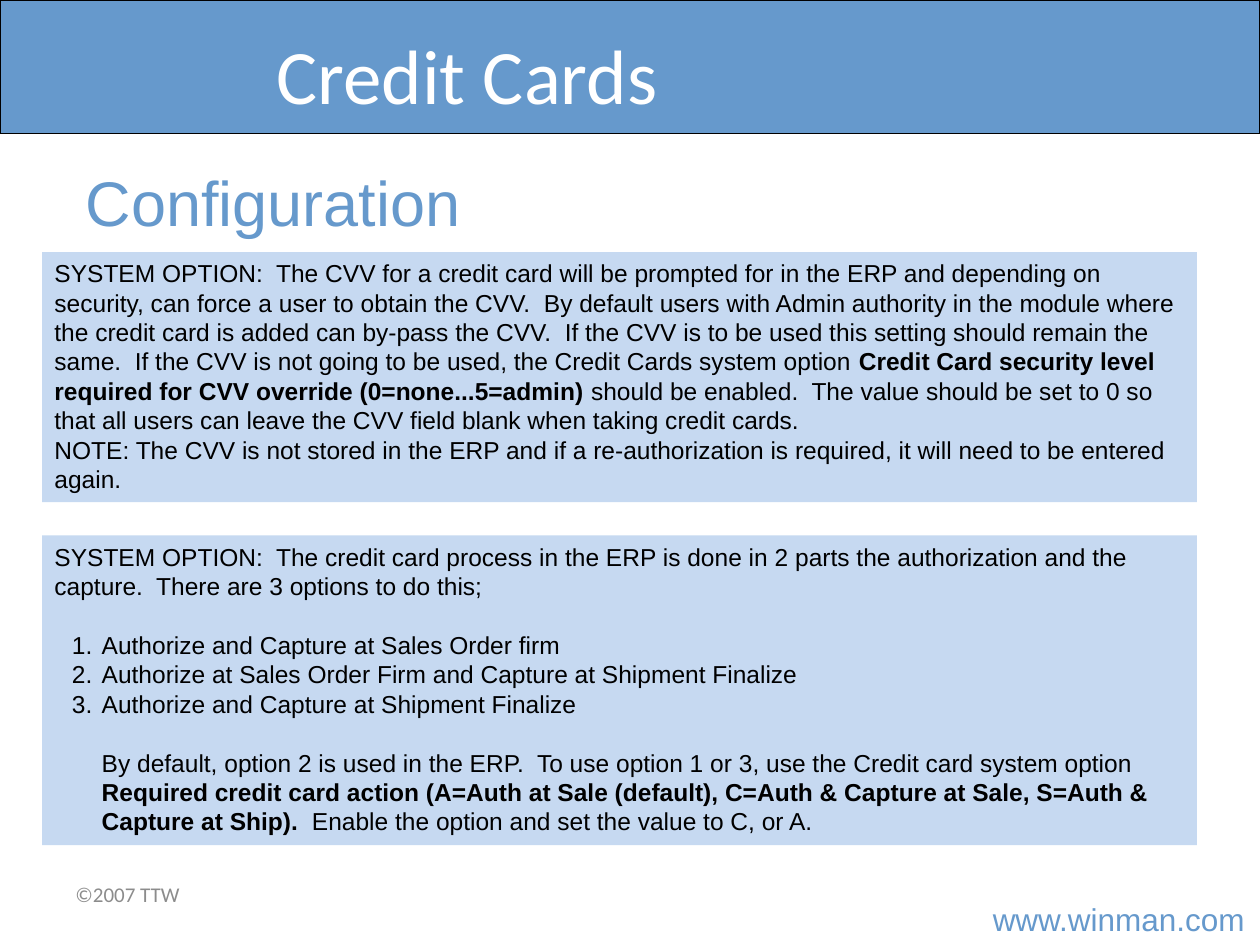
from pptx import Presentation
from pptx.dml.color import RGBColor
from pptx.enum.shapes import MSO_SHAPE
from pptx.enum.text import MSO_ANCHOR, PP_ALIGN
from pptx.util import Pt
from lxml.etree import SubElement
from pptx.oxml.ns import qn

BLUE = RGBColor(0x66, 0x99, 0xCC)
PALE = RGBColor(0xC6, 0xD9, 0xF1)
GREY = RGBColor(0x8C, 0x8C, 0x8C)
BLACK = RGBColor(0, 0, 0)
WHITE = RGBColor(255, 255, 255)
LINE = 16.8  # height of one line of body text

prs = Presentation()
prs.slide_width, prs.slide_height = Pt(720), Pt(540)
s = prs.slides.add_slide(prs.slide_layouts[5])


def write(tf, text, size=14, font="Arial", color=BLACK, align=PP_ALIGN.LEFT,
          before=0, indent=0, numbered=False, first=True):
    """Add a paragraph; every second part between ** marks is bold."""
    p = tf.paragraphs[0] if first else tf.add_paragraph()
    pPr = p._p.get_or_add_pPr()
    if indent:
        pPr.set("marL", str(Pt(indent)))
        pPr.set("indent", str(Pt(-17 if numbered else 0)))
    p.alignment = align
    p.space_before = Pt(before)
    if numbered:
        SubElement(pPr, qn("a:buFont"), typeface="+mj-lt")
        SubElement(pPr, qn("a:buAutoNum"), type="arabicPeriod")
    for i, part in enumerate(text.split("**")):
        if part:
            r = p.add_run()
            r.text = part
            r.font.size, r.font.name = Pt(size), font
            r.font.bold = i % 2 == 1
            r.font.color.rgb = color


def add_rect(left, top, width, height, fill):
    sp = s.shapes.add_shape(MSO_SHAPE.RECTANGLE, Pt(left), Pt(top), Pt(width), Pt(height))
    sp.shadow.inherit = False
    sp.fill.solid()
    sp.fill.fore_color.rgb = fill
    sp.line.fill.background()
    sp.text_frame.word_wrap = True
    sp.text_frame.vertical_anchor = MSO_ANCHOR.TOP
    return sp


# Header band, placed behind the title
band = add_rect(0, 0, 720, 76.3, BLUE)
band.line.color.rgb = BLACK
band.line.width = Pt(0.75)
title = s.shapes.title
title._element.addprevious(band._element)
title.left, title.top, title.width, title.height = Pt(0), Pt(12), Pt(534), Pt(60)
title.text_frame.vertical_anchor = MSO_ANCHOR.MIDDLE
write(title.text_frame, "Credit Cards", size=44, font="Calibri", color=WHITE,
      align=PP_ALIGN.CENTER)

# Subtitle, copyright and web address
for left, top, width, height, anchor, wrap, text, fmt in [
    (42, 90, 552, 51, MSO_ANCHOR.TOP, True, "Configuration", dict(size=36, color=BLUE)),
    (36, 492, 168, 37.5, MSO_ANCHOR.MIDDLE, True, "©2007 TTW",
     dict(size=12, font="Calibri", color=GREY)),
    (560.2, 511, 159.8, 29, MSO_ANCHOR.TOP, False, "www.winman.com",
     dict(size=18, color=BLUE)),
]:
    tf = s.shapes.add_textbox(Pt(left), Pt(top), Pt(width), Pt(height)).text_frame
    tf.word_wrap = wrap
    tf.vertical_anchor = anchor
    write(tf, text, **fmt)

# Security code option
tf = add_rect(24, 144, 660, 143, PALE).text_frame
write(tf, "SYSTEM OPTION:  The CVV for a credit card will be prompted for in the ERP and "
      "depending on security, can force a user to obtain the CVV.  By default users with "
      "Admin authority in the module where the credit card is added can by-pass the CVV.  "
      "If the CVV is to be used this setting should remain the same.  If the CVV is not "
      "going to be used, the Credit Cards system option **Credit Card security level "
      "required for CVV override (0=none...5=admin) **should be enabled.  The value should "
      "be set to 0 so that all users can leave the CVV field blank when taking credit cards.")
write(tf, "NOTE: The CVV is not stored in the ERP and if a re-authorization is required, "
      "it will need to be entered again.", first=False)

# Authorization and capture option
tf = add_rect(24, 306, 660, 177, PALE).text_frame
write(tf, "SYSTEM OPTION:  The credit card process in the ERP is done in 2 parts the "
      "authorization and the capture.  There are 3 options to do this;")
for i, step in enumerate([
    "Authorize and Capture at Sales Order firm",
    "Authorize at Sales Order Firm and Capture at Shipment Finalize",
    "Authorize and Capture at Shipment Finalize",
]):
    write(tf, step, before=0 if i else LINE, indent=27, numbered=True, first=False)
write(tf, "By default, option 2 is used in the ERP.  To use option 1 or 3, use the Credit "
      "card system option", before=LINE, indent=27, first=False)
write(tf, "**Required credit card action (A=Auth at Sale (default), C=Auth & Capture at Sale, "
      "S=Auth & Capture at Ship).  **Enable the option and set the value to C, or A.",
      indent=27, first=False)

prs.save("out.pptx")
